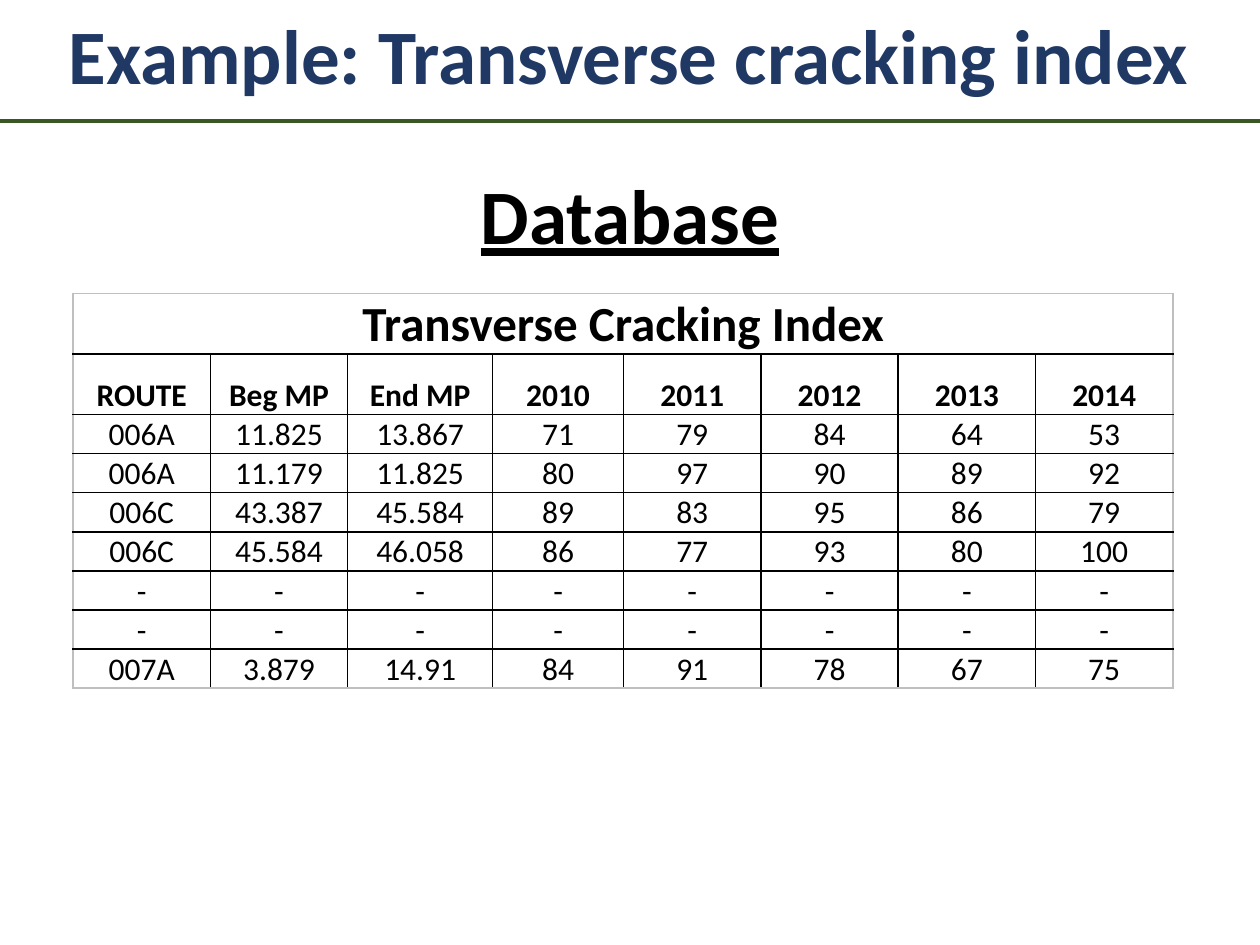
"""Build the transverse cracking index slide."""
from lxml import etree
from pptx import Presentation
from pptx.dml.color import RGBColor
from pptx.enum.shapes import MSO_CONNECTOR
from pptx.enum.text import MSO_ANCHOR, MSO_AUTO_SIZE, PP_ALIGN
from pptx.oxml.ns import qn
from pptx.util import Inches, Pt

STRAIGHT = MSO_CONNECTOR.STRAIGHT
BOTTOM = MSO_ANCHOR.BOTTOM
FIT_SHAPE = MSO_AUTO_SIZE.SHAPE_TO_FIT_TEXT
CENTER = PP_ALIGN.CENTER

NAVY = RGBColor(0x20, 0x38, 0x64)
GREEN = RGBColor(0x38, 0x57, 0x23)
BLACK = RGBColor(0, 0, 0)
GRAY = RGBColor(0xBF, 0xBF, 0xBF)

TABLE_TITLE = "Transverse Cracking Index"
HEADERS = ["ROUTE", "Beg MP", "End MP", "2010", "2011", "2012", "2013", "2014"]
RECORDS = [
    ["006A", "11.825", "13.867", "71", "79", "84", "64", "53"],
    ["006A", "11.179", "11.825", "80", "97", "90", "89", "92"],
    ["006C", "43.387", "45.584", "89", "83", "95", "86", "79"],
    ["006C", "45.584", "46.058", "86", "77", "93", "80", "100"],
    ["-"] * 8,
    ["-"] * 8,
    ["007A", "3.879", "14.91", "84", "91", "78", "67", "75"],
]
COL_WIDTHS = [1.09, 1.09, 1.15, 1.04] + [1.09] * 4
ROW_HEIGHTS = [0.48, 0.48] + [0.31] * len(RECORDS)


class SlideBuilder:
    """Hold the style and the current slide."""

    font = "Calibri"
    margins = {"margin_left": 0.01, "margin_right": 0.01,
               "margin_top": 0.01, "margin_bottom": 0}

    def __init__(self, prs):
        self.s = prs.slides.add_slide(prs.slide_layouts[5])

    def add_text(self, tf, text, size, color=BLACK, **formats):
        p = tf.paragraphs[0]
        p.alignment = CENTER
        r = p.add_run()
        r.text = text
        values = {"name": self.font, "size": Pt(size), **formats}
        for name, value in values.items():
            setattr(r.font, name, value)
        r.font.color.rgb = color

    def heading(self, sp, box, text, **formats):
        sp.left, sp.top, sp.width, sp.height = map(Inches, box)
        tf = sp.text_frame
        tf.word_wrap = True
        tf.auto_size = FIT_SHAPE
        self.add_text(tf, text, 44, bold=True, **formats)

    def title(self, box, text):
        self.heading(self.s.shapes.title, box, text, color=NAVY)

    def subtitle(self, box, text):
        sp = self.s.shapes.add_textbox(*map(Inches, box))
        self.heading(sp, box, text, underline=True)

    def rule(self, y, width, color, weight):
        cx = self.s.shapes.add_connector(
            STRAIGHT, 0, Inches(y), Inches(width), Inches(y))
        cx.line.color.rgb = color
        cx.line.width = Pt(weight)
        etree.SubElement(cx.element.spPr, qn("a:effectLst"))

    def borders(self, cell, colors):
        tc_pr = cell._tc.get_or_add_tcPr()
        for side, color in colors.items():
            ln = etree.SubElement(tc_pr, qn(f"a:ln{side}"), w=str(Pt(1)))
            fill = etree.SubElement(ln, qn("a:solidFill"))
            etree.SubElement(fill, qn("a:srgbClr"), val=str(color))

    def table(self, left, top, rows, widths, heights):
        last_row, last_col = len(heights) - 1, len(widths) - 1
        table = self.s.shapes.add_table(
            len(heights), len(widths), Inches(left), Inches(top),
            Inches(sum(widths)), Inches(sum(heights))).table
        for col, width in zip(table.columns, widths):
            col.width = Inches(width)
        for row, height in zip(table.rows, heights):
            row.height = Inches(height)
        table.cell(0, 0).merge(table.cell(0, last_col))
        for i in range(len(heights)):
            for j in range(len(widths)):
                cell = table.cell(i, j)
                outer = {"L": j == 0, "R": i == 0 or j == last_col,
                         "T": i == 0, "B": i == last_row}
                self.borders(cell, {side: GRAY if edge else BLACK
                                    for side, edge in outer.items()})
                cell.fill.background()
                cell.vertical_anchor = BOTTOM
                for name, value in self.margins.items():
                    setattr(cell, name, Inches(value))
                if j < len(rows[i]):
                    self.add_text(cell.text_frame, rows[i][j],
                                  18 if i else 28, bold=i < 2)


def main():
    prs = Presentation()
    prs.slide_width, prs.slide_height = Inches(10), Inches(7.5)
    slide = SlideBuilder(prs)
    slide.table(0.58, 2.33, [[TABLE_TITLE], HEADERS, *RECORDS],
                COL_WIDTHS, ROW_HEIGHTS)
    slide.title((0.08, 0.01, 9.83, 0.84), "Example: Transverse cracking index")
    slide.rule(0.96, 10, GREEN, 2)
    slide.subtitle((3.09, 1.28, 3.82, 0.84), "Database")
    prs.save("out.pptx")


if __name__ == "__main__":
    main()
